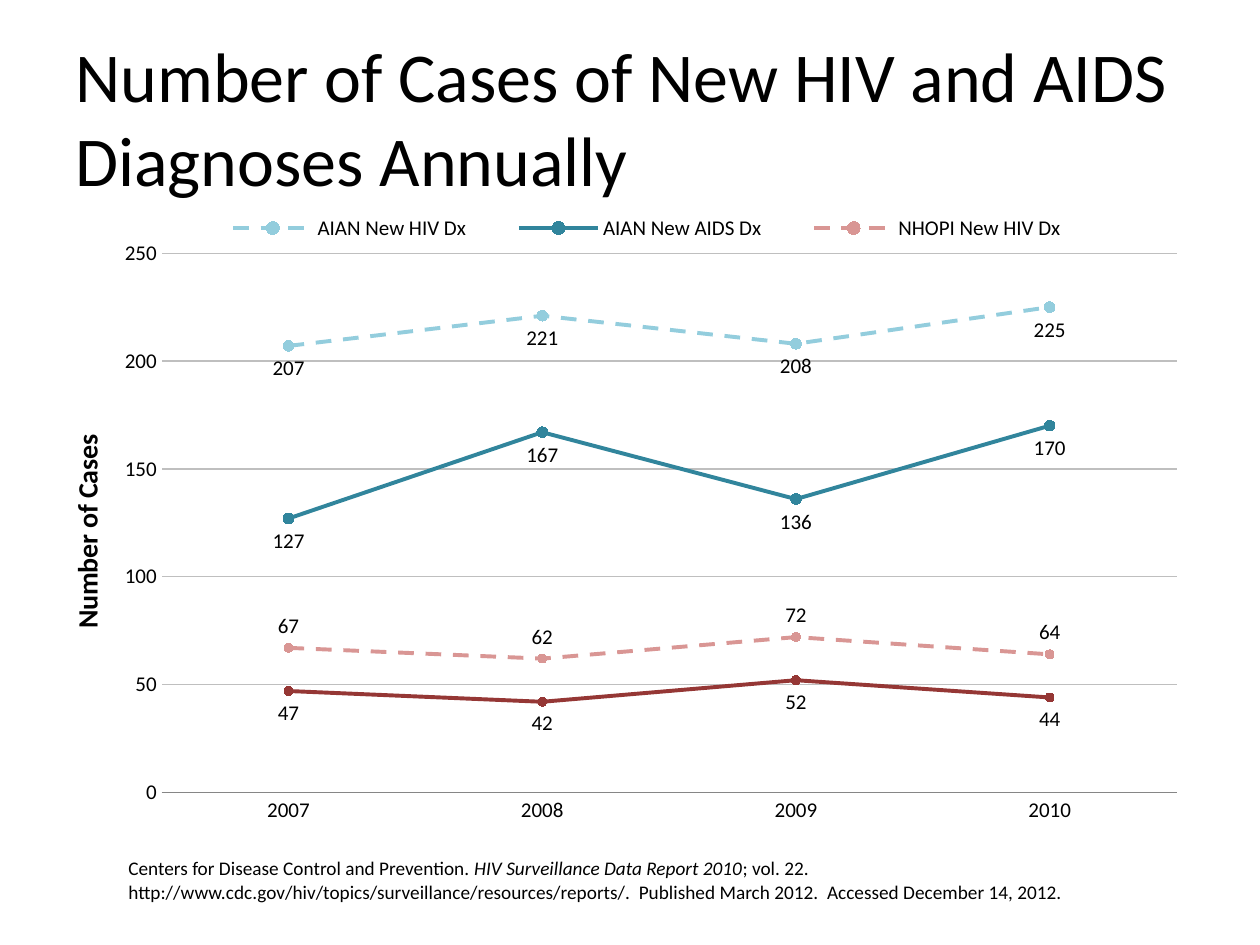
"""Build a slide charting annual new HIV and AIDS diagnoses."""
import lxml.etree
import pptx
import pptx.chart.data
import pptx.dml.color
import pptx.enum.chart
import pptx.enum.dml
import pptx.enum.text
import pptx.oxml.ns
import pptx.util

Inches, Pt = pptx.util.Inches, pptx.util.Pt
qn = pptx.oxml.ns.qn
Label = pptx.enum.chart.XL_LABEL_POSITION

FONT = "Calibri"
COLORS = {
    "text": "000000", "grid": "BFBFBF", "axis": "868686",
    "aian_hiv": "93CDDD", "aian_aids": "31859C",
    "nhopi_hiv": "D99694", "nhopi_aids": "953735",
}
TITLE = "Number of Cases of New HIV and AIDS Diagnoses Annually"
AXIS_TITLE = "Number of Cases"
YEARS = ["2007", "2008", "2009", "2010"]
DIAGNOSES = [
    ("AIAN New HIV Dx", (207, 221, 208, 225), "aian_hiv", True, 6, Label.BELOW),
    ("AIAN New AIDS Dx", (127, 167, 136, 170), "aian_aids", False, 6, Label.BELOW),
    ("NHOPI New HIV Dx", (67, 62, 72, 64), "nhopi_hiv", True, 5, Label.ABOVE),
    ("NHOPI New AIDS Dx", (47, 42, 52, 44), "nhopi_aids", False, 5, Label.BELOW),
]
UNLISTED_SERIES = 3
CITATION = [
    ("Centers for Disease Control and Prevention. ", False),
    ("HIV Surveillance Data Report 2010", True),
    ("; vol. 22. http://www.cdc.gov/hiv/topics/surveillance/resources/reports/."
     "  Published March 2012.  Accessed December 14, 2012.", False),
]


def rgb(name):
    return pptx.dml.color.RGBColor.from_string(COLORS[name])


def style(font, size, bold=False, italic=False):
    font.name, font.size, font.bold, font.italic = FONT, Pt(size), bold, italic
    font.color.rgb = rgb("text")


def add_text(slide, box, pieces, size, anchor):
    frame = slide.shapes.add_textbox(*map(Inches, box)).text_frame
    frame.word_wrap = True
    frame.vertical_anchor = anchor
    for words, italic in pieces:
        run = frame.paragraphs[0].add_run()
        run.text = words
        style(run.font, size, italic=italic)


def place(part, index, box, inner=False):
    for old in part.findall(qn("c:layout")):
        part.remove(old)
    layout = lxml.etree.Element(qn("c:layout"))
    manual = lxml.etree.SubElement(layout, qn("c:manualLayout"))
    settings = [("layoutTarget", "inner")] if inner else []
    settings += [("xMode", "edge"), ("yMode", "edge"), *zip("xywh", box)]
    for tag, value in settings:
        lxml.etree.SubElement(manual, qn("c:" + tag)).set("val", str(value))
    part.insert(index, layout)


def style_axes(chart):
    years, cases = chart.category_axis, chart.value_axis
    for axis in (years, cases):
        axis.major_tick_mark = pptx.enum.chart.XL_TICK_MARK.NONE
        style(axis.tick_labels.font, 12)
    years.format.line.color.rgb = rgb("axis")
    cases.minimum_scale, cases.maximum_scale, cases.major_unit = 0, 250, 50
    cases.format.line.fill.background()
    cases.major_gridlines.format.line.color.rgb = rgb("grid")
    cases.major_gridlines.format.line.width = Pt(0.75)
    title = cases.axis_title.text_frame
    title.text = AXIS_TITLE
    style(title.paragraphs[0].runs[0].font, 16, bold=True)


def style_series(series, color, dashed, marker_size, label_position):
    series.smooth = False
    series.format.line.color.rgb = rgb(color)
    series.format.line.width = Pt(2.25)
    if dashed:
        series.format.line.dash_style = pptx.enum.dml.MSO_LINE.DASH
    marker = series.marker
    marker.style = pptx.enum.chart.XL_MARKER_STYLE.CIRCLE
    marker.size = marker_size
    marker.format.fill.solid()
    marker.format.fill.fore_color.rgb = rgb(color)
    marker.format.line.color.rgb = rgb(color)
    labels = series.data_labels
    labels.show_value = True
    labels.position = label_position
    style(labels.font, 12)


def style_legend(chart):
    chart.has_legend = True
    legend = chart.legend
    legend.position = pptx.enum.chart.XL_LEGEND_POSITION.TOP
    legend.include_in_layout = False
    style(legend.font, 12)
    place(legend._element, 1, (0.11, 0.01, 0.81, 0.07))
    entry = lxml.etree.Element(qn("c:legendEntry"))
    for tag, value in (("idx", UNLISTED_SERIES), ("delete", 1)):
        lxml.etree.SubElement(entry, qn("c:" + tag)).set("val", str(value))
    legend._element.insert(1, entry)


def add_diagnoses_chart(slide):
    data = pptx.chart.data.CategoryChartData()
    data.categories = YEARS
    for name, counts, *_ in DIAGNOSES:
        data.add_series(name, counts)
    chart = slide.shapes.add_chart(
        pptx.enum.chart.XL_CHART_TYPE.LINE_MARKERS,
        *map(Inches, (0.5, 1.58, 9, 5.12)), data).chart
    chart.has_title = False
    style(chart.font, 10)
    chart.plots[0].vary_by_categories = False
    style_axes(chart)
    for series, (_, _, *look) in zip(chart.plots[0].series, DIAGNOSES):
        style_series(series, *look)
    style_legend(chart)
    plot_area = chart._chartSpace.find(".//" + qn("c:plotArea"))
    place(plot_area, 0, (0.087, 0.084, 0.895, 0.836), inner=True)


def main():
    deck = pptx.Presentation()
    deck.slide_width, deck.slide_height = Inches(10), Inches(7.5)
    slide = deck.slides.add_slide(deck.slide_layouts[6])
    anchors = pptx.enum.text.MSO_ANCHOR
    add_text(slide, (0.5, 0.3, 9, 1.25), [(TITLE, False)], 40, anchors.MIDDLE)
    add_diagnoses_chart(slide)
    add_text(slide, (0.92, 6.75, 8, 0.47), CITATION, 11, anchors.TOP)
    deck.save("out.pptx")


if __name__ == "__main__":
    main()
